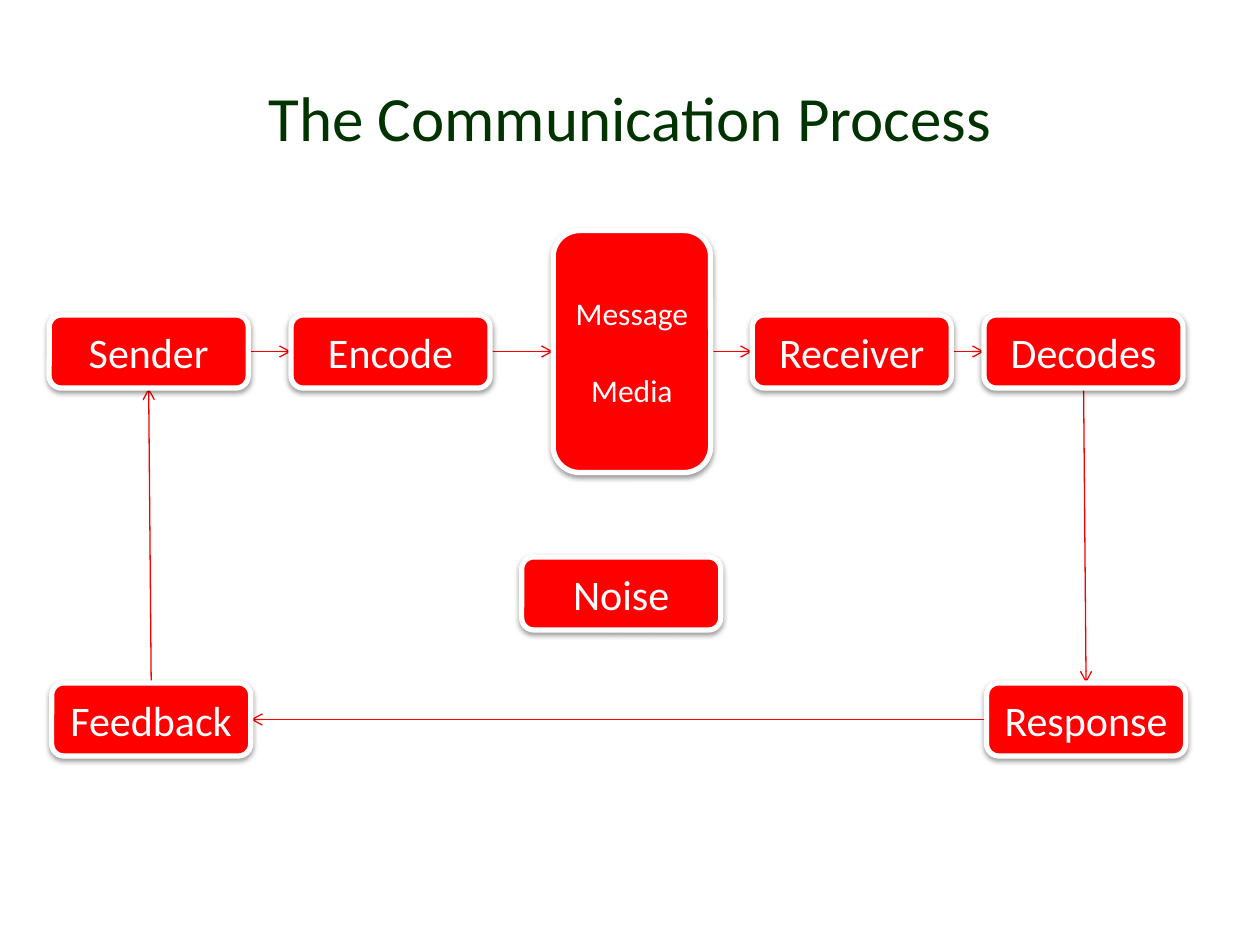
from lxml import etree
from pptx import Presentation
from pptx import util as u
from pptx.dml.color import RGBColor
from pptx.enum import shapes, text
from pptx.oxml import parse_xml
from pptx.oxml.ns import nsdecls, qn

COLORS = {"title": "003300", "box": "FF0000", "white": "FFFFFF",
          "arrow": "F90000", "shadow": "000000"}
FONT = "Calibri"
TITLE = "The Communication Process"
BOX_SIZE = (1.58, 0.58)
TOP_ROW, BOTTOM_ROW = 2.5, 5.42
BOXES = {
    "Sender": (0.39, TOP_ROW),
    "Encode": (2.31, TOP_ROW),
    "Receiver": (5.97, TOP_ROW),
    "Decodes": (7.81, TOP_ROW),
    "Feedback": (0.41, BOTTOM_ROW),
    "Response": (7.83, BOTTOM_ROW),
    "Noise": (4.14, 4.42),
}
MESSAGE = "Message\nMedia"
MESSAGE_BOX = (4.39, 1.83, 1.25, 1.92)
TOP, LEFT, BOTTOM, RIGHT = range(4)
ARROWS = [
    ("Sender", RIGHT, "Encode", LEFT),
    ("Encode", RIGHT, MESSAGE, LEFT),
    (MESSAGE, RIGHT, "Receiver", LEFT),
    ("Receiver", RIGHT, "Decodes", LEFT),
    ("Decodes", BOTTOM, "Response", TOP),
    ("Feedback", TOP, "Sender", BOTTOM),
    ("Response", LEFT, "Feedback", RIGHT),
]


def color(name):
    return RGBColor.from_string(COLORS[name])


def write(shape, content, size, color_name):
    frame = shape.text_frame
    frame.text = content
    frame.word_wrap = True
    frame.vertical_anchor = text.MSO_ANCHOR.MIDDLE
    for paragraph in frame.paragraphs:
        paragraph.alignment = text.PP_ALIGN.CENTER
        font = paragraph.font
        font.name, font.size = FONT, u.Pt(size)
        font.color.rgb = color(color_name)


def add_arrow(slide):
    arrow = slide.shapes.add_connector(shapes.MSO_CONNECTOR.STRAIGHT, 0, 0, 0, 0)
    arrow.line.color.rgb = color("arrow")
    arrow.line.width = u.Pt(0.75)
    etree.SubElement(arrow.line._get_or_add_ln(), qn("a:tailEnd"), type="arrow")
    etree.SubElement(arrow._element.spPr, qn("a:effectLst"))
    return arrow


def add_box(slide, content, place, size):
    box = slide.shapes.add_shape(shapes.MSO_SHAPE.ROUNDED_RECTANGLE, *map(u.Inches, place))
    box.fill.solid()
    box.fill.fore_color.rgb = color("box")
    box.line.color.rgb = color("white")
    box.line.width = u.Pt(3)
    box._element.spPr.append(parse_xml(
        f'<a:effectLst {nsdecls("a")}><a:outerShdw blurRad="{u.Pt(3.1)}" '
        f'dist="{u.Pt(1.6)}" dir="5400000" rotWithShape="0">'
        f'<a:srgbClr val="{COLORS["shadow"]}"><a:alpha val="38000"/></a:srgbClr>'
        '</a:outerShdw></a:effectLst>'))
    write(box, content, size, "white")
    return box


def main():
    presentation = Presentation()
    presentation.slide_width, presentation.slide_height = u.Inches(10), u.Inches(7.5)
    slide = presentation.slides.add_slide(presentation.slide_layouts[6])

    title = slide.shapes.add_textbox(*map(u.Inches, (0.25, 0.3, 9.5, 1.25)))
    write(title, TITLE, 36, "title")

    arrows = [add_arrow(slide) for _ in ARROWS]
    boxes = {name: add_box(slide, name, place + BOX_SIZE, 24)
             for name, place in BOXES.items()}
    boxes[MESSAGE] = add_box(slide, MESSAGE, MESSAGE_BOX, 18)
    boxes[MESSAGE].text_frame.paragraphs[1].space_before = u.Pt(22)

    for arrow, (source, source_side, target, target_side) in zip(arrows, ARROWS):
        arrow.begin_connect(boxes[source], source_side)
        arrow.end_connect(boxes[target], target_side)

    presentation.save("out.pptx")


if __name__ == "__main__":
    main()
